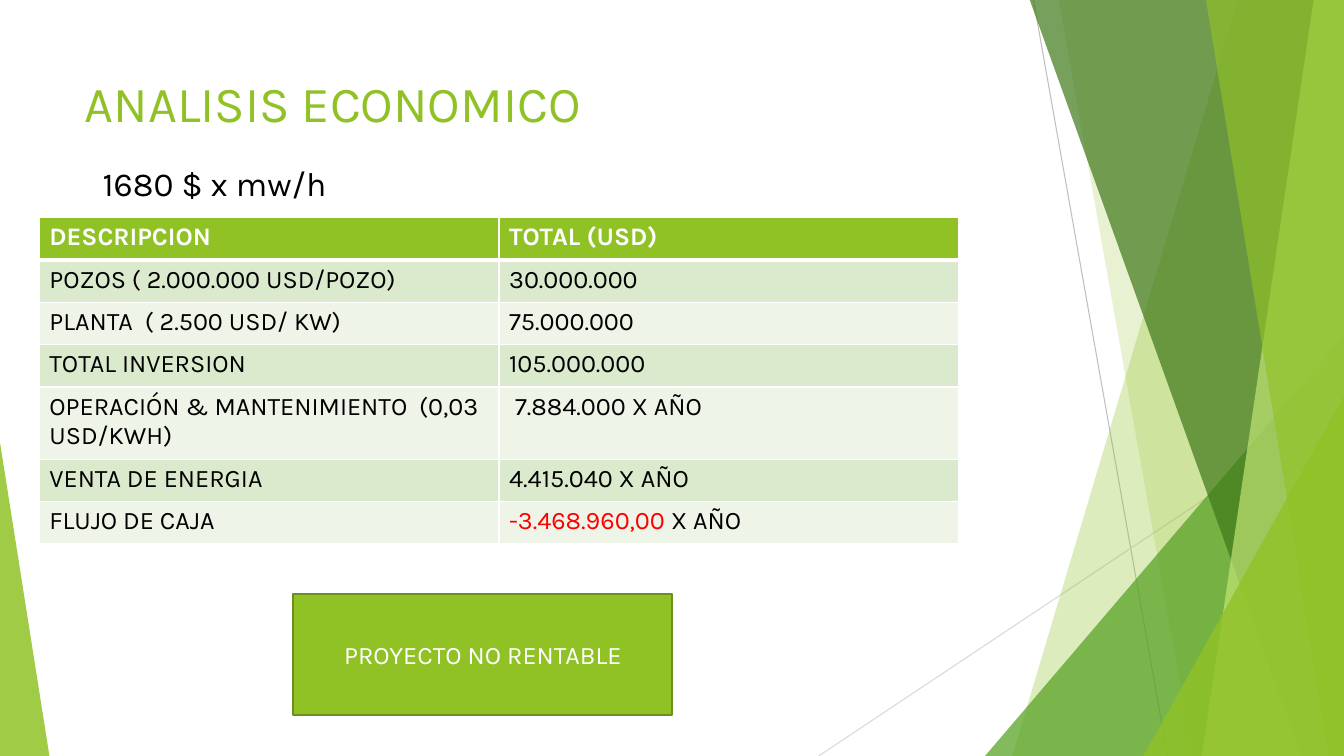
from pptx import Presentation
from pptx.dml.color import RGBColor
from pptx.enum.shapes import MSO_CONNECTOR, MSO_SHAPE
from pptx.enum.text import MSO_ANCHOR, PP_ALIGN
from pptx.oxml.ns import qn
from pptx.util import Pt
from lxml import etree

LINE = MSO_CONNECTOR.STRAIGHT
TRI, RECT = MSO_SHAPE.ISOSCELES_TRIANGLE, MSO_SHAPE.RECTANGLE
TOP, MID = MSO_ANCHOR.TOP, MSO_ANCHOR.MIDDLE
LEFT, CENTER = PP_ALIGN.LEFT, PP_ALIGN.CENTER

# Content
TITLE = "ANALISIS ECONOMICO"
PRICE = "1680 $ x mw/h"
RESULT = "PROYECTO NO RENTABLE"
ROWS = [
    ("DESCRIPCION", "TOTAL (USD)"),
    ("POZOS ( 2.000.000 USD/POZO)", "30.000.000"),
    ("PLANTA  ( 2.500 USD/ KW)", "75.000.000"),
    ("TOTAL INVERSION", "105.000.000"),
    ("OPERACIÓN & MANTENIMIENTO  (0,03 USD/KWH)", " 7.884.000 X AÑO"),
    ("VENTA DE ENERGIA", "4.415.040 X AÑO"),
    ("FLUJO DE CAJA", "-3.468.960,00 X AÑO"),
]
LOSS = "-3.468.960,00 "  # part of the last total shown in red

# Theme
THEME = {
    "font": "Karla", "green": "90C226", "leaf": "54A021", "dark": "3F7819",
    "lime": "C0E474", "edge": "6B901C", "band": ("EEF4E8", "DBE9CD"),
    "white": "FFFFFF", "black": "000000", "red": "FF0000",
    "head": 36, "sub": 24, "text": 18,
}

# Layout in px, 100 to the inch
PX = 9144
WIDE, HIGH = 1333, 750
RAYS = [((1025, 0), (1158, HIGH), "BFBFBF"), ((WIDE, 403), (812, HIGH), "D9D9D9")]
# Facets reach the right edge: (top x, bottom x, colour, opacity)
# Wedges stand on the bottom edge: (left, top, width, lean, colour, opacity)
DECOR = [
    (1228, 1004, "green", 30),
    (1050, 1183, "green", 20),
    (977, 333, 356, 1, "leaf", 72),
    (1021, 1291, "dark", 70),
    (1303, 1192, "lime", 70),
    (1196, 1318, "green", 65),
    (1134, 393, 199, 1, "green", 80),
    (0, 439, 49, 0, "green", 85),
]
COL, ROW, TALL = 456, 42, 72


def px(*vals):
    return [v * PX for v in vals]


def rgb(name):
    return RGBColor.from_string(THEME.get(name, name))


def paint(shape, color, alpha=100):
    shape.shadow.inherit = False
    shape.fill.solid()
    shape.fill.fore_color.rgb = rgb(color)
    shape.line.fill.background()
    if alpha < 100:
        clr = shape._element.spPr.find(qn("a:solidFill"))[0]
        etree.SubElement(clr, qn("a:alpha"), val=str(alpha * 1000))


def write(frame, runs, size, align=LEFT, bold=False):
    para = frame.paragraphs[0]
    para.alignment = align
    for text, color in runs:
        run = para.add_run()
        run.text = text
        look = {"name": THEME["font"], "size": Pt(THEME[size]), "bold": bold}
        for key, val in look.items():
            setattr(run.font, key, val)
        run.font.color.rgb = rgb(color)
    return para


def border(cell, side, width):
    line = etree.SubElement(cell._tc.get_or_add_tcPr(), qn("a:ln" + side), w=str(Pt(width)))
    fill = etree.SubElement(line, qn("a:solidFill"))
    etree.SubElement(fill, qn("a:srgbClr"), val=THEME["white"])


def draw_decor(shapes):
    for start, end, color in RAYS:
        ray = shapes.add_connector(LINE, *px(*start, *end))
        ray.line.color.rgb = rgb(color)
        ray.line.width = Pt(0.75)
        etree.SubElement(ray._element.spPr, qn("a:effectLst"))
    for *place, color, alpha in DECOR:
        if len(place) == 2:
            top, base = place
            path = shapes.build_freeform(top, -1, scale=PX)
            path.add_line_segments([(WIDE, -1), (WIDE, HIGH), (base, HIGH)], close=True)
            part = path.convert_to_shape()
        else:
            x, y, w, lean = place
            part = shapes.add_shape(TRI, *px(x, y, w, HIGH - y))
            part.adjustments[0] = lean
        paint(part, color, alpha)


def draw_table(shapes):
    high = ROW * (len(ROWS) - 1) + TALL
    grid = shapes.add_table(len(ROWS), 2, *px(39, 216, 2 * COL, high)).table
    for col in grid.columns:
        col.width = COL * PX
    for i, row in enumerate(ROWS):
        head = i == 0
        # The one label too long for a line gets a taller row
        grid.rows[i].height = (TALL if len(row[0]) > 40 else ROW) * PX
        for j, text in enumerate(row):
            cell = grid.cell(i, j)
            for side in "LRTB":
                thick = (head and side == "B") or (i == 1 and side == "T")
                border(cell, side, 3 if thick else 1)
            cell.fill.solid()
            cell.fill.fore_color.rgb = rgb("green" if head else THEME["band"][i % 2])
            runs = [(text, "white" if head else "black")]
            if text.startswith(LOSS):
                runs = [(LOSS, "red"), (text[len(LOSS):], "black")]
            write(cell.text_frame, runs, "text", bold=head)


def main():
    prs = Presentation()
    prs.slide_width, prs.slide_height = px(WIDE, HIGH)
    slide = prs.slides.add_slide(prs.slide_layouts[5])
    shapes = slide.shapes
    draw_decor(shapes)

    # Title
    title = shapes.title
    title.left, title.top, title.width, title.height = px(74, 67, 940, 144)
    title.text_frame.vertical_anchor = TOP
    write(title.text_frame, [(TITLE, "green")], "head")

    draw_table(shapes)

    # Price line
    price = shapes.add_textbox(*px(92, 112, 1150, 145)).text_frame
    price.word_wrap = True
    price.vertical_anchor = MID
    write(price, [(PRICE, "black")], "sub").line_spacing = 0.9

    # Result box
    box = shapes.add_shape(RECT, *px(291, 589, 376, 120))
    paint(box, "green")
    box.line.color.rgb = rgb("edge")
    box.line.width = Pt(1.5)
    box.text_frame.vertical_anchor = MID
    write(box.text_frame, [(RESULT, "white")], "text", CENTER)

    prs.save("out.pptx")


if __name__ == "__main__":
    main()
